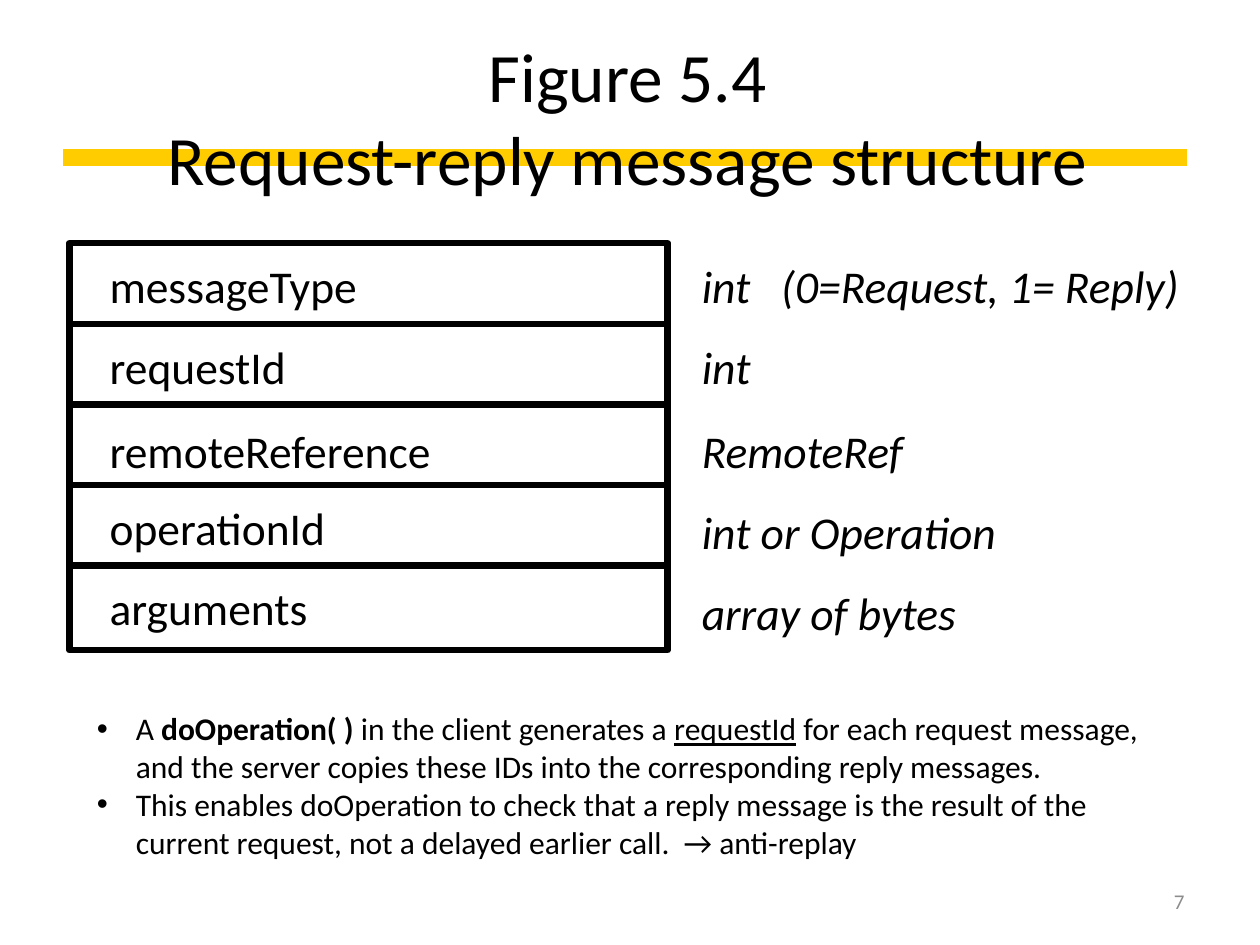
import pptx
import pptx.dml.color
import pptx.enum.shapes
import pptx.enum.text
import pptx.util
from lxml import etree
from pptx.oxml.ns import qn
from pptx.util import Inches

ALIGN = pptx.enum.text.PP_ALIGN
ANCHOR = pptx.enum.text.MSO_ANCHOR


def color(value):
    return pptx.dml.color.RGBColor.from_string(value)


class SlideBuilder:
    font = "Calibri"
    ink = "000000"
    rule_width = 3.75

    def __init__(self, slide):
        self.slide = slide

    def format_run(self, run, size, ink=None, italic=None):
        run.font.name = self.font
        run.font.size = pptx.util.Pt(size)
        run.font.color.rgb = color(ink or self.ink)
        run.font.italic = italic

    def title(self, text, left, top, width, height, size):
        shape = self.slide.shapes.title
        shape.left, shape.top = Inches(left), Inches(top)
        shape.width, shape.height = Inches(width), Inches(height)
        frame = shape.text_frame
        frame.text = text
        frame.word_wrap = True
        frame.auto_size = pptx.enum.text.MSO_AUTO_SIZE.NONE
        frame.vertical_anchor = ANCHOR.MIDDLE
        frame.margin_right = Inches(0.14)
        paragraph = frame.paragraphs[0]
        paragraph.alignment = ALIGN.CENTER
        for run in paragraph.runs:
            self.format_run(run, size)
        return shape

    def line(self, start, end, ink=None, width=None):
        connector = self.slide.shapes.add_connector(
            pptx.enum.shapes.MSO_CONNECTOR.STRAIGHT,
            *(Inches(value) for value in (*start, *end)))
        connector.line.color.rgb = color(ink or self.ink)
        connector.line.width = pptx.util.Pt(width or self.rule_width)
        etree.SubElement(connector.element.spPr, qn("a:effectLst"))
        return connector

    def frame(self, left, top, width, height):
        shape = self.slide.shapes.add_shape(
            pptx.enum.shapes.MSO_SHAPE.RECTANGLE,
            Inches(left), Inches(top), Inches(width), Inches(height))
        shape.shadow.inherit = False
        shape.fill.background()
        shape.line.color.rgb = color(self.ink)
        shape.line.width = pptx.util.Pt(self.rule_width)

    def text_box(self, left, top, width, height):
        return self.slide.shapes.add_textbox(
            Inches(left), Inches(top), Inches(width), Inches(height)).text_frame

    def label(self, text, left, top, width, italic=None):
        frame = self.text_box(left, top, width, 0.44)
        frame.margin_left = frame.margin_right = 0
        frame.margin_top = frame.margin_bottom = 0
        frame.word_wrap = False
        frame.text = text
        self.format_run(frame.paragraphs[0].runs[0], 26, italic=italic)

    def page_number(self, text, left, top, width, height):
        frame = self.text_box(left, top, width, height)
        frame.word_wrap = True
        frame.vertical_anchor = ANCHOR.MIDDLE
        frame.text = text
        paragraph = frame.paragraphs[0]
        paragraph.alignment = ALIGN.RIGHT
        self.format_run(paragraph.runs[0], 12, "8C8C8C")

    def bullets(self, items, left, top, width, height):
        frame = self.text_box(left, top, width, height)
        frame.word_wrap = True
        for index, parts in enumerate(items):
            paragraph = frame.add_paragraph() if index else frame.paragraphs[0]
            properties = paragraph._p.get_or_add_pPr()
            properties.set("marL", str(Inches(0.31)))
            properties.set("indent", str(Inches(-0.31)))
            etree.SubElement(properties, qn("a:buFont"), typeface="Arial")
            etree.SubElement(properties, qn("a:buChar"), char="•")
            for text, emphasis in parts:
                run = paragraph.add_run()
                run.text = text
                self.format_run(run, 18)
                if emphasis:
                    setattr(run.font, emphasis, True)


FIELDS = [
    ("messageType", 2, 2.05, "int   (0=Request, 1= Reply)", 3.93, 2.05),
    ("requestId", 1.42, 2.69, "int", 0.48, 2.69),
    ("remoteReference", 2.6, 3.36, "RemoteRef", 1.72, 3.36),
    ("operationId", 1.74, 3.97, "int or Operation", 2.45, 4),
    ("arguments", 1.59, 4.6, "array of bytes", 2.13, 4.64),
]

NOTES = [
    [("A ", None), ("doOperation( )", "bold"),
     (" in the client generates a ", None), ("requestId", "underline"),
     (" for each request message, and the server copies these IDs into "
      "the corresponding reply messages.", None)],
    [("This enables doOperation to check that a reply message is the result "
      "of the current request, not a delayed earlier call.  → anti-replay",
      None)],
]


def main():
    presentation = pptx.Presentation()
    presentation.slide_width = Inches(10)
    presentation.slide_height = Inches(7.5)
    slide = presentation.slides.add_slide(presentation.slide_layouts[5])
    builder = SlideBuilder(slide)

    title = builder.title("Figure 5.4\vRequest-reply message structure",
                          0.5, 0.3, 9, 1.25, 39.6)
    title_rule = builder.line((0.5, 1.25), (9.42, 1.25), "FFCC00", 10)
    title.element.addprevious(title_rule.element)

    builder.frame(0.55, 1.93, 4.75, 3.23)
    for row in range(1, len(FIELDS)):
        y = 1.93 + 0.64 * row
        builder.line((0.57, y), (5.28, y))
    for name, name_width, name_top, kind, kind_width, kind_top in FIELDS:
        builder.label(name, 0.87, name_top, name_width)
        builder.label(kind, 5.57, kind_top, kind_width, italic=True)

    builder.page_number("7", 7.17, 6.95, 2.33, 0.4)
    builder.bullets(NOTES, 0.67, 5.58, 8.74, 1.31)
    presentation.save("out.pptx")


if __name__ == "__main__":
    main()
